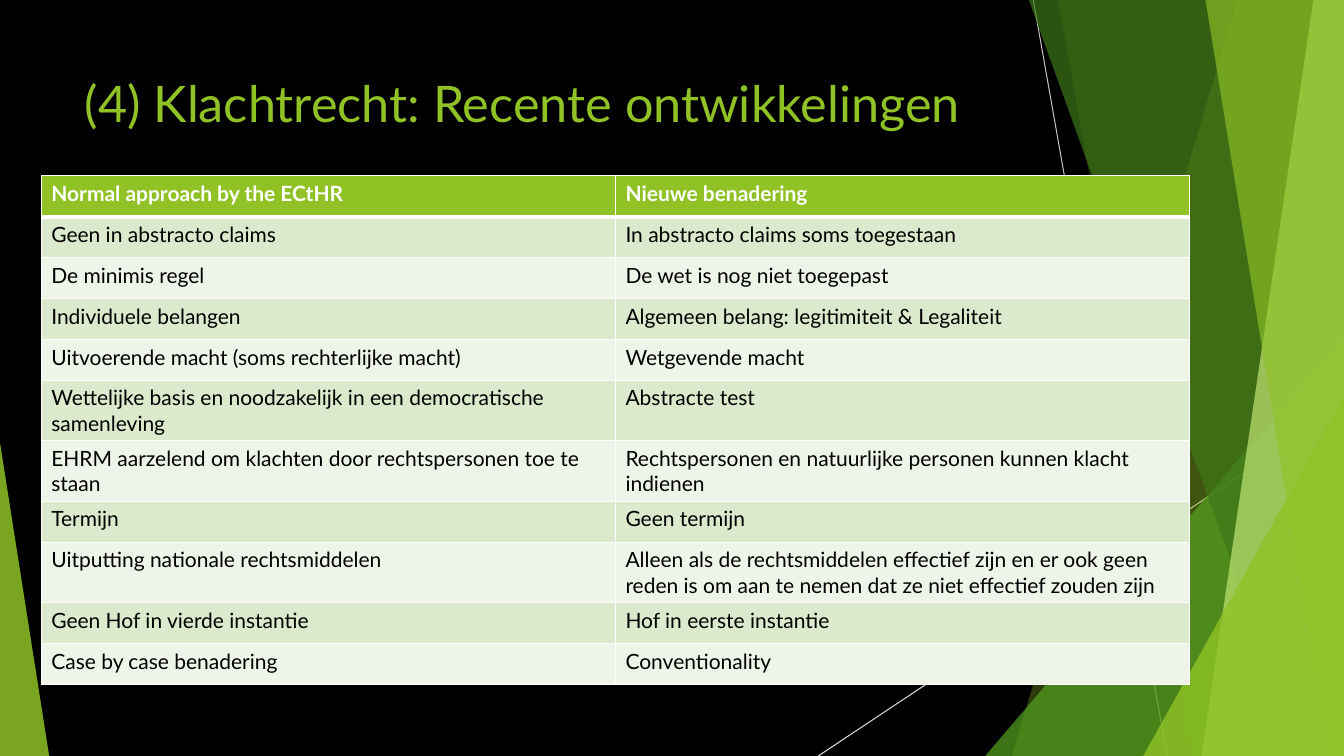
from dataclasses import dataclass

from lxml.etree import SubElement
from pptx import Presentation
from pptx.dml.color import RGBColor
from pptx.enum.shapes import MSO_CONNECTOR, MSO_SHAPE
from pptx.enum.text import MSO_ANCHOR, MSO_AUTO_SIZE, PP_ALIGN
from pptx.oxml import parse_xml
from pptx.oxml.ns import nsdecls, qn
from pptx.util import Cm, Pt


@dataclass(frozen=True)
class Theme:
    font: str = "Lato"
    title_size: int = 36
    table_size: int = 15
    black: str = "000000"
    white: str = "FFFFFF"
    lime: str = "90C226"
    green: str = "54A021"
    forest: str = "3F7819"
    pale: str = "C0E474"
    odd_row: str = "DBE9CD"
    even_row: str = "EEF4E8"
    ray_dark: str = "BFBFBF"
    ray_light: str = "D9D9D9"


THEME = Theme()
WIDTH, HEIGHT = 33.87, 19.05
TITLE = "(4) Klachtrecht: Recente ontwikkelingen"
APPROACHES = [
    ("Normal approach by the ECtHR", "Nieuwe benadering"),
    ("Geen in abstracto claims", "In abstracto claims soms toegestaan"),
    ("De minimis regel", "De wet is nog niet toegepast"),
    ("Individuele belangen", "Algemeen belang: legitimiteit & Legaliteit"),
    ("Uitvoerende macht (soms rechterlijke macht)", "Wetgevende macht"),
    ("Wettelijke basis en noodzakelijk in een democratische samenleving",
     "Abstracte test"),
    ("EHRM aarzelend om klachten door rechtspersonen toe te staan",
     "Rechtspersonen en natuurlijke personen kunnen klacht indienen"),
    ("Termijn", "Geen termijn"),
    ("Uitputting nationale rechtsmiddelen",
     "Alleen als de rechtsmiddelen effectief zijn en er ook geen reden is om "
     "aan te nemen dat ze niet effectief zouden zijn"),
    ("Geen Hof in vierde instantie", "Hof in eerste instantie"),
    ("Case by case benadering", "Conventionality"),
]
TWO_LINE_ROWS = {5, 6, 8}


def rgb(color):
    return RGBColor.from_string(color)


def style_font(paragraph, size, color, bold=False):
    font = paragraph.font
    font.name, font.size, font.bold = THEME.font, Pt(size), bold
    font.color.rgb = rgb(color)


def paint(facet, color, opacity):
    facet.shadow.inherit = False
    facet.fill.solid()
    facet.fill.fore_color.rgb = rgb(color)
    facet.line.fill.background()
    srgb = facet.fill._xPr.find(".//" + qn("a:srgbClr"))
    SubElement(srgb, qn("a:alpha"), val=str(opacity * 1000))


def add_ray(shapes, start, end, color):
    ray = shapes.add_connector(MSO_CONNECTOR.STRAIGHT,
                               *(Cm(value) for value in start + end))
    ray.line.color.rgb = rgb(color)
    ray.line.width = Pt(0.75)
    SubElement(ray._element.spPr, qn("a:effectLst"))


def add_band(shapes, box, top_x, bottom_x, color, opacity):
    left, top, width, height = box
    right, bottom = left + width, top + height
    corners = [(left + top_x, top), (right, top), (right, bottom),
               (left + bottom_x, bottom)]
    points = [(Cm(x), Cm(y)) for x, y in corners]
    outline = shapes.build_freeform(*points[0])
    outline.add_line_segments(points[1:], close=True)
    paint(outline.convert_to_shape(), color, opacity)


def add_corner(shapes, box, width, height, apex, color, opacity):
    left, top, box_width, box_height = box
    corner = shapes.add_shape(
        MSO_SHAPE.ISOSCELES_TRIANGLE,
        Cm(left + apex * (box_width - width)), Cm(top + box_height - height),
        Cm(width), Cm(height))
    corner.adjustments[0] = apex
    paint(corner, color, opacity)


def add_facets(shapes, box):
    left, top, width, height = box
    add_ray(shapes, (left + 26.04, top), (left + 29.41, top + height),
            THEME.ray_dark)
    add_ray(shapes, (left + width, top + 10.24), (left + 20.62, top + height),
            THEME.ray_light)
    add_band(shapes, box, 31.19, 25.5, THEME.lime, 30)
    add_band(shapes, box, 26.67, 30.05, THEME.lime, 20)
    add_corner(shapes, box, 9.04, 10.59, 1, THEME.green, 72)
    add_band(shapes, box, 25.93, 32.79, THEME.forest, 70)
    add_band(shapes, box, 33.1, 30.28, THEME.pale, 70)
    add_band(shapes, box, 30.38, 33.48, THEME.lime, 65)
    add_corner(shapes, box, 5.06, 9.07, 1, THEME.lime, 80)
    add_corner(shapes, box, 1.24, 7.9, 0, THEME.lime, 85)


def place_title(title, box):
    title.left, title.top, title.width, title.height = map(Cm, box)
    frame = title.text_frame
    frame.text = TITLE
    frame.word_wrap = True
    frame.auto_size = MSO_AUTO_SIZE.NONE
    frame.vertical_anchor = MSO_ANCHOR.TOP
    heading = frame.paragraphs[0]
    heading.alignment = PP_ALIGN.LEFT
    style_font(heading, THEME.title_size, THEME.lime)


def add_borders(cell, row):
    widths = {"L": 1, "R": 1, "T": 3 if row == 1 else 1,
              "B": 3 if row == 0 else 1}
    properties = cell._tc.get_or_add_tcPr()
    for index, (side, width) in enumerate(widths.items()):
        properties.insert(index, parse_xml(
            f'<a:ln{side} {nsdecls("a")} w="{Pt(width)}"><a:solidFill>'
            f'<a:srgbClr val="{THEME.white}"/></a:solidFill></a:ln{side}>'))


def add_comparison(shapes, box):
    heights = [1.52 if row in TWO_LINE_ROWS else 1.03
               for row in range(len(APPROACHES))]
    left, top, width = box
    table = shapes.add_table(len(APPROACHES), 2, Cm(left), Cm(top), Cm(width),
                             Cm(sum(heights))).table
    for row, (texts, height) in enumerate(zip(APPROACHES, heights)):
        table.rows[row].height = Cm(height)
        header = row == 0
        shade = THEME.odd_row if row % 2 else THEME.even_row
        for column, text in enumerate(texts):
            cell = table.cell(row, column)
            cell.text = text
            cell.fill.solid()
            cell.fill.fore_color.rgb = rgb(THEME.lime if header else shade)
            add_borders(cell, row)
            style_font(cell.text_frame.paragraphs[0], THEME.table_size,
                       THEME.white if header else THEME.black, header)


def build_table_slide(deck):
    slide = deck.slides.add_slide(deck.slide_layouts[5])
    slide.background.fill.solid()
    slide.background.fill.fore_color.rgb = rgb(THEME.black)
    add_facets(slide.shapes, (0, 0, WIDTH, HEIGHT))
    place_title(slide.shapes.title, (1.88, 1.7, 23.88, 3.66))
    add_comparison(slide.shapes, (1.04, 4.43, 28.94))


def main():
    deck = Presentation()
    deck.slide_width, deck.slide_height = Cm(WIDTH), Cm(HEIGHT)
    build_table_slide(deck)
    deck.save("out.pptx")


if __name__ == "__main__":
    main()
